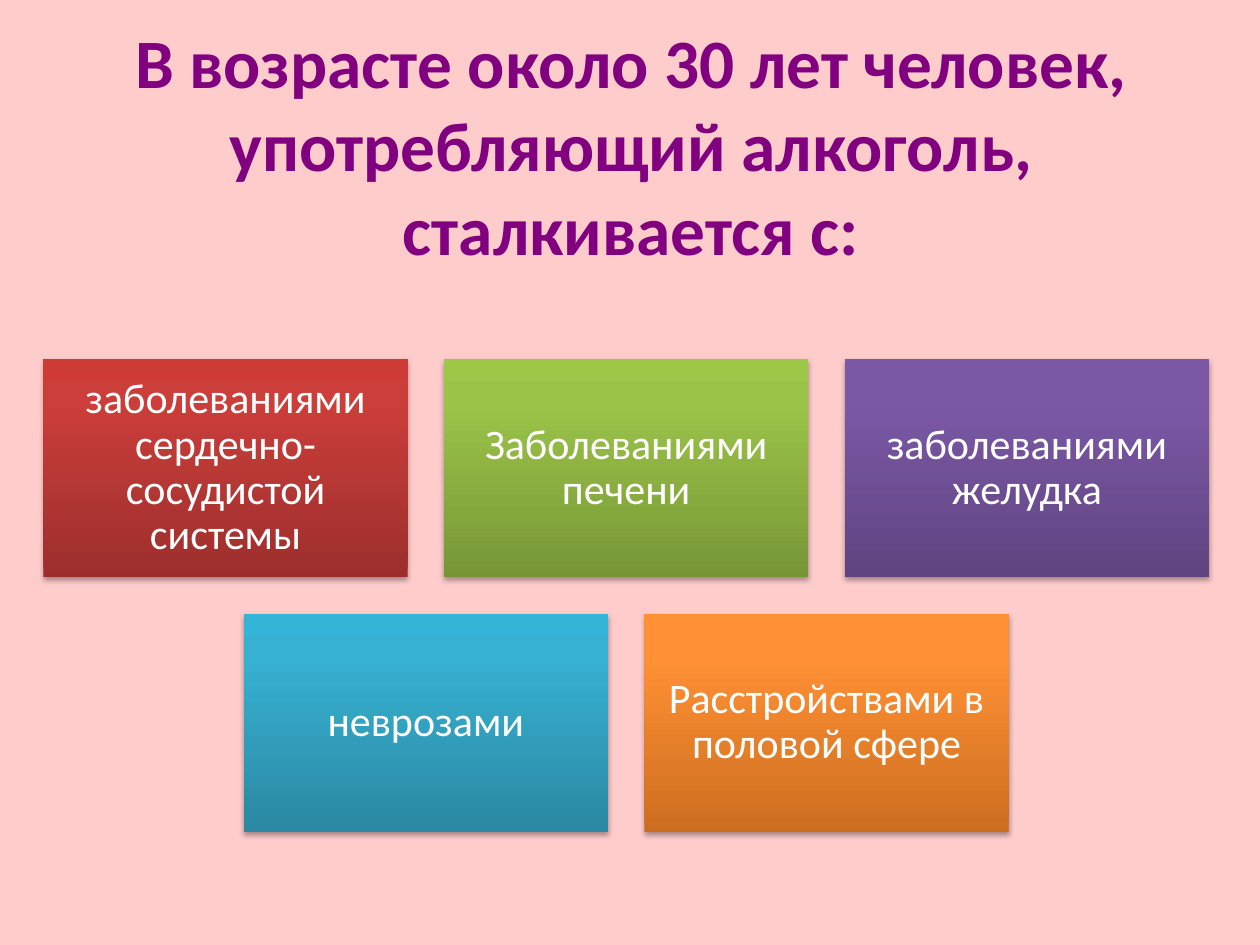
from lxml.etree import SubElement
from pptx import Presentation
from pptx.dml.color import RGBColor
from pptx.enum.shapes import MSO_SHAPE
from pptx.enum.text import MSO_ANCHOR, MSO_AUTO_SIZE, PP_ALIGN
from pptx.oxml.ns import qn
from pptx.util import Inches, Pt

# Content: each card has its text and its gradient from bottom to top
TITLE = "В возрасте около 30 лет человек, употребляющий алкоголь, сталкивается с:"
CARD_ROWS = [
    [
        ("заболеваниями сердечно-сосудистой системы", ("9C2F2D", "CB3E3A", "CE3B37")),
        ("Заболеваниями печени", ("779737", "9BC348", "9DC746")),
        ("заболеваниями желудка", ("5F4480", "7B58A6", "7C57A8")),
    ],
    [
        ("неврозами", ("2A88A2", "37B1D2", "34B4D6")),
        ("Расстройствами в половой сфере", ("CC6E20", "FF9034", "FF9136")),
    ],
]
STOPS = (0, 80, 100)

PINK = RGBColor(0xFF, 0xCC, 0xCC)
PURPLE = RGBColor(0x80, 0x00, 0x80)
WHITE = RGBColor(0xFF, 0xFF, 0xFF)

# Card grid in inches: rows are centred on one axis
CARD_WIDTH, CARD_HEIGHT, GAP = 2.89, 1.73, 0.29
GRID_CENTER, GRID_TOP = 4.97, 2.85


def write_text(shape, text, *, size, color, bold=False, spacing=1.0):
    frame = shape.text_frame
    frame.word_wrap = True
    frame.auto_size = MSO_AUTO_SIZE.NONE
    frame.vertical_anchor = MSO_ANCHOR.MIDDLE
    para = frame.paragraphs[0]
    para.alignment = PP_ALIGN.CENTER
    para.line_spacing = spacing
    span = para.add_run()
    span.text = text
    span.font.name = "Calibri"
    span.font.size = Pt(size)
    span.font.bold = bold
    span.font.color.rgb = color
    return frame


def add_color(parent, value):
    return SubElement(parent, qn("a:srgbClr"), val=value)


def fill_gradient(shape, colors):
    shape.fill.gradient()
    shape.fill.gradient_angle = 90
    stop_list = shape.element.spPr.find(qn("a:gradFill")).find(qn("a:gsLst"))
    for stop in list(stop_list):
        stop_list.remove(stop)
    for position, color in zip(STOPS, colors):
        add_color(SubElement(stop_list, qn("a:gs"), pos=str(position * 1000)), color)


def add_shadow(shape):
    shape.shadow.inherit = False
    effects = shape.element.spPr.find(qn("a:effectLst"))
    shadow = SubElement(effects, qn("a:outerShdw"), blurRad=str(Pt(3.1)),
                        dist=str(Pt(1.8)), dir="5400000", rotWithShape="0")
    SubElement(add_color(shadow, "000000"), qn("a:alpha"), val="35000")


def add_card(page, left, top, text, colors):
    card = page.shapes.add_shape(MSO_SHAPE.RECTANGLE, Inches(left), Inches(top),
                                 Inches(CARD_WIDTH), Inches(CARD_HEIGHT))
    fill_gradient(card, colors)
    card.line.fill.background()
    add_shadow(card)
    frame = write_text(card, text, size=24, color=WHITE, spacing=0.9)
    frame.margin_left = frame.margin_right = Inches(0.1)
    frame.margin_top = frame.margin_bottom = Inches(0.1)


def main():
    deck = Presentation()
    deck.slide_width, deck.slide_height = Inches(10), Inches(7.5)
    page = deck.slides.add_slide(deck.slide_layouts[5])
    page.background.fill.solid()
    page.background.fill.fore_color.rgb = PINK

    # Title
    title = page.shapes.title
    title.left, title.top = Inches(0.51), Inches(0.52)
    title.width, title.height = Inches(9), Inches(1.25)
    write_text(title, TITLE, size=39.6, color=PURPLE, bold=True)

    # Cards
    for row, cards in enumerate(CARD_ROWS):
        row_width = len(cards) * (CARD_WIDTH + GAP) - GAP
        top = GRID_TOP + row * (CARD_HEIGHT + GAP)
        for column, (text, colors) in enumerate(cards):
            left = GRID_CENTER - row_width / 2 + column * (CARD_WIDTH + GAP)
            add_card(page, left, top, text, colors)

    deck.save("out.pptx")


if __name__ == "__main__":
    main()
